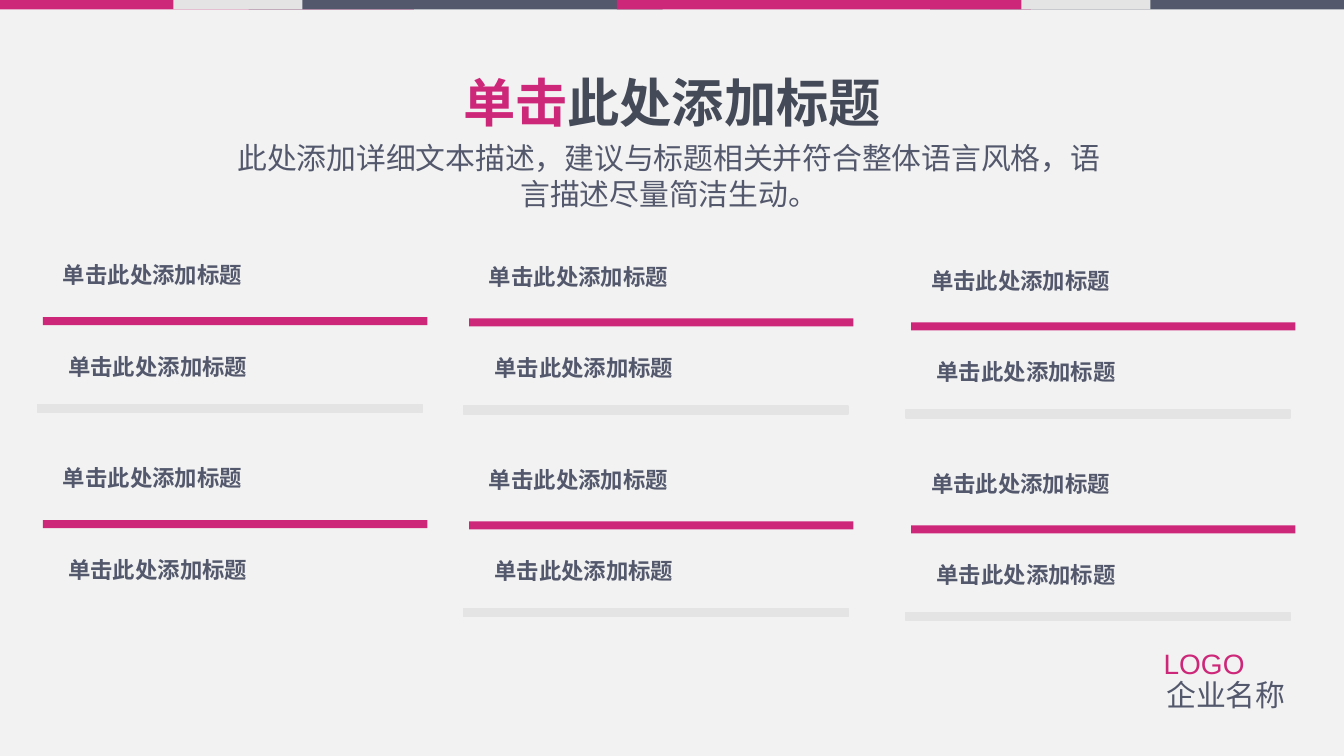
from dataclasses import dataclass
from itertools import product

from lxml.etree import SubElement
from pptx import Presentation
from pptx.dml.color import RGBColor
from pptx.enum.shapes import MSO_SHAPE as Preset
from pptx.enum.text import MSO_ANCHOR as Anchor, PP_ALIGN as Align
from pptx.oxml.ns import qn
from pptx.slide import Slide
from pptx.util import Inches, Pt

COLORS = {
    "background": "F2F2F2",
    "pink": "CD2779",
    "slate": "53586C",
    "dark": "454A58",
    "grey": "E4E4E4",
}
PROMPT = "单击此处添加标题"
FRAME_FORMAT = {"word_wrap": True, "vertical_anchor": Anchor.MIDDLE}


@dataclass(frozen=True)
class Box:
    left: float
    top: float
    width: float
    height: float

    def lengths(self) -> list[Inches]:
        return [Inches(v) for v in (self.left, self.top, self.width, self.height)]


@dataclass(frozen=True)
class Span:
    text: str
    color: str


@dataclass(frozen=True)
class Column:
    left: float
    top: float
    heading_widths: tuple[float, float]


def rgb(color: str) -> RGBColor:
    return RGBColor.from_string(COLORS[color])


def add_bar(slide: Slide, box: Box, color: str, outlined: bool = False) -> None:
    bar = slide.shapes.add_shape(Preset.RECTANGLE, *box.lengths())
    bar.shadow.inherit = False
    bar.fill.solid()
    bar.fill.fore_color.rgb = rgb(color)
    if outlined:
        bar.line.color.rgb = rgb(color)
        bar.line.width = Pt(0.75)
    else:
        bar.line.fill.background()


def add_text(slide: Slide, box: Box, spans: list[Span], size: float,
             bold: bool = False, face: str = "Arial", align: Align = Align.LEFT) -> None:
    frame = slide.shapes.add_textbox(*box.lengths()).text_frame
    for attribute, value in FRAME_FORMAT.items():
        setattr(frame, attribute, value)
    paragraph = frame.paragraphs[0]
    paragraph.alignment = align
    font_format = {"name": face, "size": Pt(size), "bold": bold}
    for span in spans:
        run = paragraph.add_run()
        run.text = span.text
        for attribute, value in font_format.items():
            setattr(run.font, attribute, value)
        run.font.color.rgb = rgb(span.color)
        SubElement(run.font._element, qn("a:ea")).set("typeface", face)


def add_card(slide: Slide, left: float, top: float, heading_width: float,
             has_base: bool) -> None:
    prompt = [Span(PROMPT, "slate")]
    add_text(slide, Box(left + 0.05, top - 0.62, heading_width, 0.61), prompt, 12, bold=True)
    add_text(slide, Box(left + 0.09, top + 0.06, 2.77, 0.61), prompt, 12, bold=True)
    if has_base:
        add_bar(slide, Box(left - 0.04, top + 0.65, 2.86, 0.06), "grey", outlined=True)
    add_bar(slide, Box(left, top, 2.86, 0.06), "pink")


def main() -> None:
    deck = Presentation()
    deck.slide_width = Inches(10)
    deck.slide_height = Inches(10 * 9 / 16)
    slide = deck.slides.add_slide(deck.slide_layouts[6])
    slide.background.fill.solid()
    slide.background.fill.fore_color.rgb = rgb("background")

    top_band = [
        (6.92, 3.08, "slate"),
        (0, 3.08, "pink"),
        (1.85, 3.08, "slate"),
        (1.29, 0.96, "grey"),
        (4.59, 3.08, "pink"),
        (7.6, 0.96, "grey"),
    ]
    for left, width, color in top_band:
        add_bar(slide, Box(left, 0, width, 0.07), color)

    add_text(slide, Box(0.5, 0.45, 9, 0.61),
             [Span("单击", "pink"), Span("此处添加标题", "dark")],
             28, bold=True, align=Align.CENTER)
    add_text(slide, Box(1.63, 1, 6.7, 0.61),
             [Span("此处添加详细文本描述，建议与标题相关并符合整体语言风格，"
                   "语言描述尽量简洁生动。", "slate")],
             16, face="Calibri", align=Align.CENTER)

    columns = [
        Column(0.32, 2.36, (2.15, 2.15)),
        Column(3.49, 2.37, (3.04, 2.77)),
        Column(6.78, 2.4, (2.77, 2.77)),
    ]
    row_pitch = 1.51
    for row, (index, column) in product(range(2), enumerate(columns)):
        add_card(slide, column.left, column.top + row * row_pitch,
                 column.heading_widths[row], has_base=(row, index) != (1, 0))

    add_text(slide, Box(8.58, 4.96, 1.35, 0.42), [Span("企业名称", "slate")], 16)
    add_text(slide, Box(8.56, 4.74, 1.51, 0.39), [Span("LOGO", "pink")], 15)

    deck.save("out.pptx")


if __name__ == "__main__":
    main()
